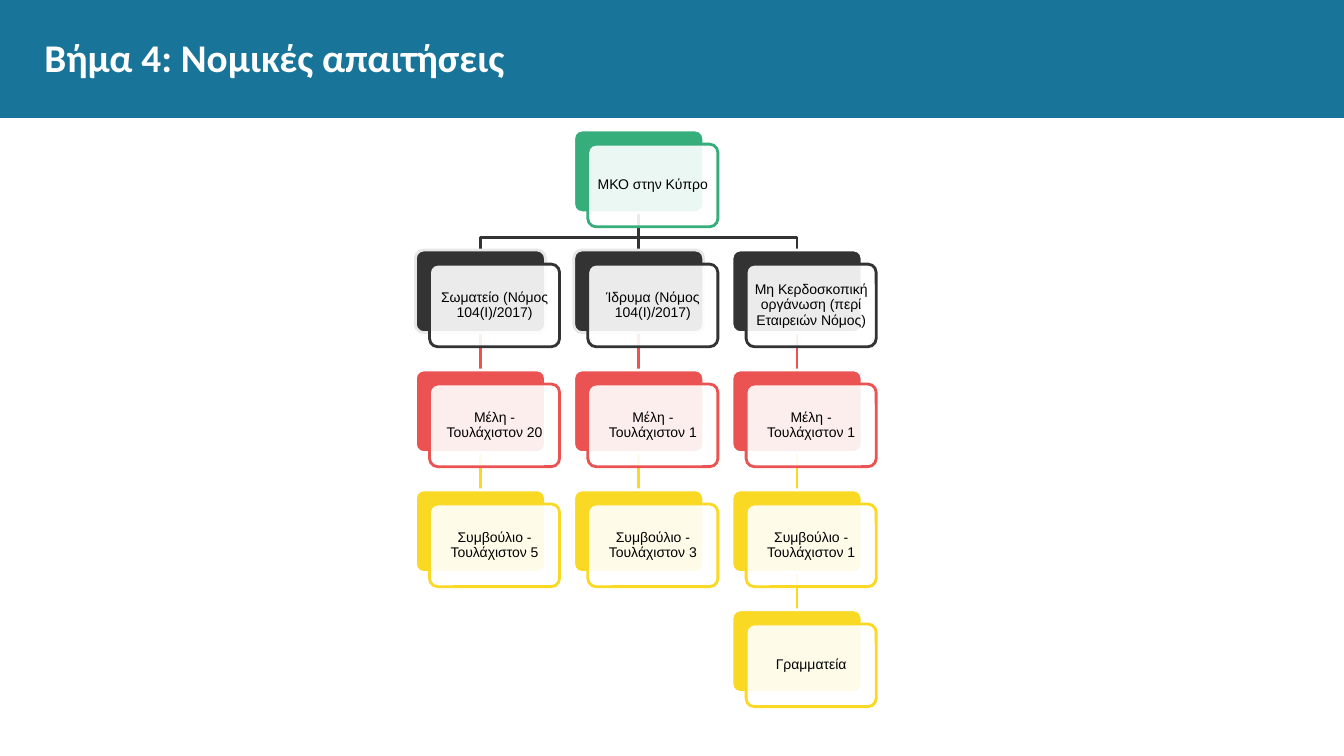
from lxml import etree
from pptx import Presentation
from pptx.dml.color import RGBColor
from pptx.enum.shapes import MSO_CONNECTOR, MSO_SHAPE
from pptx.enum.text import MSO_ANCHOR, MSO_AUTO_SIZE, PP_ALIGN
from pptx.oxml.ns import qn
from pptx.util import Inches, Pt

RECTANGLE, ROUNDED = MSO_SHAPE.RECTANGLE, MSO_SHAPE.ROUNDED_RECTANGLE
STRAIGHT = MSO_CONNECTOR.STRAIGHT
MIDDLE, NO_FIT = MSO_ANCHOR.MIDDLE, MSO_AUTO_SIZE.NONE
LEFT, CENTER = PP_ALIGN.LEFT, PP_ALIGN.CENTER
BOTTOM_SIDE, TOP_SIDE = 2, 0

SLIDE_WIDTH, SLIDE_HEIGHT = 13.33, 7.5
GRID_LEFT, GRID_TOP = 4.12, 1.29
COLUMN_STEP, ROW_STEP = 1.57, 1.19
CARD_WIDTH, CARD_HEIGHT = 1.29, 0.82
PANEL_OFFSET = 0.14
BEND_DROP = 0.25
LINE_WIDTH = 2

GREEN, DARK, RED, YELLOW = "36AE7C", "333333", "EB5353", "F9D923"
WHITE, BLACK, BLUE, PALE_GREY = "FFFFFF", "000000", "187498", "E7E7E7"
ROW_COLOURS = [GREEN, DARK, RED, YELLOW, YELLOW]

ROOT_COLUMN = 1
ROOT_TEXT = "ΜΚΟ στην Κύπρο"
BRANCHES = [
    (PALE_GREY, ["Σωματείο (Νόμος 104(Ι)/2017)", "Μέλη - Τουλάχιστον 20",
                 "Συμβούλιο - Τουλάχιστον 5"]),
    (PALE_GREY, ["Ίδρυμα (Νόμος 104(Ι)/2017)", "Μέλη - Τουλάχιστον 1",
                 "Συμβούλιο - Τουλάχιστον 3"]),
    (WHITE, ["Μη Κερδοσκοπική οργάνωση (περί Εταιρειών Νόμος)",
             "Μέλη - Τουλάχιστον 1", "Συμβούλιο - Τουλάχιστον 1",
             "Γραμματεία"]),
]


def colour(hex_string):
    return RGBColor.from_string(hex_string)


def send_to_back(shape):
    shape.element.getparent().insert(2, shape.element)


def write(shape, text, size, font, ink, bold=False, align=LEFT, inset=0.0,
          spacing=1.0, after=0):
    frame = shape.text_frame
    frame.word_wrap = True
    frame.auto_size = NO_FIT
    frame.vertical_anchor = MIDDLE
    frame.margin_left = frame.margin_right = Inches(inset)
    frame.margin_top = frame.margin_bottom = Inches(inset)
    para = frame.paragraphs[0]
    para.alignment = align
    para.line_spacing = spacing
    para.space_after = Pt(after)
    span = para.add_run()
    span.text = text
    span.font.size = Pt(size)
    span.font.name = font
    span.font.bold = bold
    span.font.color.rgb = colour(ink)


def add_block(page, kind, left, top, width, height, fill, line=None, opacity=100):
    block = page.shapes.add_shape(kind, Inches(left), Inches(top),
                                  Inches(width), Inches(height))
    block.shadow.inherit = False
    block.fill.solid()
    block.fill.fore_color.rgb = colour(fill)
    if opacity < 100:
        tint = block.element.spPr.find(qn("a:solidFill"))[0]
        etree.SubElement(tint, qn("a:alpha")).set("val", str(opacity * 1000))
    if line:
        block.line.color.rgb = colour(line)
        block.line.width = Pt(LINE_WIDTH)
    else:
        block.line.fill.background()
    if kind == ROUNDED:
        block.adjustments[0] = 0.1
    return block


def add_card(page, column, row, text, rim=WHITE):
    left = GRID_LEFT + column * COLUMN_STEP
    top = GRID_TOP + row * ROW_STEP
    shade = ROW_COLOURS[row]
    back = add_block(page, ROUNDED, left, top, CARD_WIDTH, CARD_HEIGHT, shade, rim)
    panel = add_block(page, ROUNDED, left + PANEL_OFFSET, top + PANEL_OFFSET,
                      CARD_WIDTH, CARD_HEIGHT, WHITE, shade, opacity=90)
    write(panel, text, 10, "Arial", BLACK, align=CENTER, inset=0.04,
          spacing=0.9, after=3.5)
    return back


def join_straight(page, parent, child, shade):
    link = page.shapes.add_connector(STRAIGHT, 0, 0, 0, 0)
    link.begin_connect(parent, BOTTOM_SIDE)
    link.end_connect(child, TOP_SIDE)
    link.line.color.rgb = colour(shade)
    link.line.width = Pt(LINE_WIDTH)
    etree.SubElement(link.element.spPr, qn("a:effectLst"))
    send_to_back(link)


def join_bent(page, parent, child, shade):
    start = parent.left + parent.width // 2
    end = child.left + child.width // 2
    bottom = parent.top + parent.height
    bend = bottom + Inches(BEND_DROP)
    outline = page.shapes.build_freeform(start, bottom)
    outline.add_line_segments([(start, bend), (end, bend), (end, child.top)],
                              close=False)
    link = outline.convert_to_shape()
    link.shadow.inherit = False
    link.fill.background()
    link.line.color.rgb = colour(shade)
    link.line.width = Pt(LINE_WIDTH)
    send_to_back(link)


def add_heading(page, text):
    band = add_block(page, RECTANGLE, 0, 0, SLIDE_WIDTH, 1.17, BLUE)
    send_to_back(band)
    title = page.shapes.title
    title.left, title.top = Inches(0.44), Inches(0.19)
    title.width, title.height = Inches(12.46), Inches(0.74)
    write(title, text, 28, "Calibri", WHITE, bold=True)


def add_chart_of_cards(page):
    root = add_card(page, ROOT_COLUMN, 0, ROOT_TEXT)
    for column, (first_rim, texts) in enumerate(BRANCHES):
        parent = root
        for row, text in enumerate(texts, start=1):
            card = add_card(page, column, row, text, first_rim if row == 1 else WHITE)
            bent = row == 1 and column != ROOT_COLUMN
            join = join_bent if bent else join_straight
            join(page, parent, card, ROW_COLOURS[row])
            parent = card


def main():
    deck = Presentation()
    deck.slide_width = Inches(SLIDE_WIDTH)
    deck.slide_height = Inches(SLIDE_HEIGHT)
    page = deck.slides.add_slide(deck.slide_layouts[5])
    add_heading(page, "Βήμα 4: Νομικές απαιτήσεις")
    add_chart_of_cards(page)
    deck.save("out.pptx")


if __name__ == "__main__":
    main()
